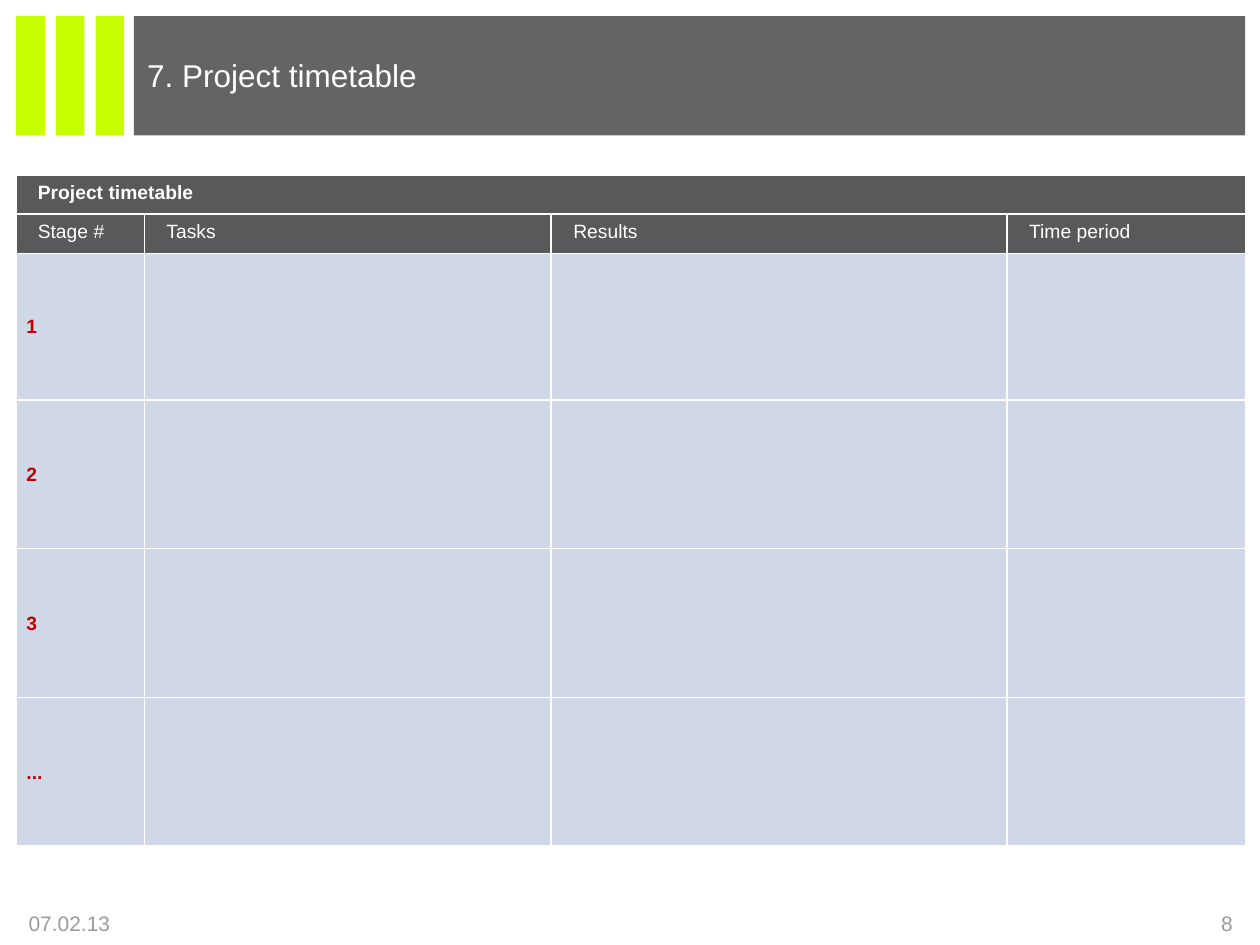
from dataclasses import dataclass

from lxml import etree
from pptx import Presentation
from pptx import util as u
from pptx.dml.color import RGBColor
from pptx.enum import shapes, text
from pptx.oxml.ns import qn
from pptx.slide import Slide
from pptx.table import _Cell
from pptx.text.text import _Paragraph

COLORS = {
    "white": "FFFFFF",
    "banner": "646464",
    "lime": "C8FF00",
    "footer": "9B9B9B",
    "header": "595959",
    "body": "D0D8E8",
    "stage": "C00000",
}
FONT = "Arial"
COLUMN_WIDTHS = (73.5, 232.5, 260.5, 136.2)
ROW_HEIGHTS = (22.3, 22.3, 83.8, 85, 85, 85)
HEADINGS = ("Stage #", "Tasks", "Results", "Time period")
STAGES = ("1", "2", "3", "...")


@dataclass(frozen=True)
class Block:
    left: float
    width: float
    color: str
    top: float = 9.2
    height: float = 68.2


@dataclass(frozen=True)
class Label:
    words: str
    left: float
    top: float
    width: float
    height: float
    size: float
    color: str
    align: text.PP_ALIGN = text.PP_ALIGN.LEFT
    anchor: text.MSO_ANCHOR = text.MSO_ANCHOR.MIDDLE
    inset: float = 3.6


BLOCKS = [Block(76.5, 635, "banner")] + [
    Block(9.2 + 22.7 * index, 16.4, "lime") for index in range(3)
]
LABELS = [
    Label("07.02.13", 9.2, 515.5, 168, 24.5, 12, "footer"),
    Label("8", 541.5, 515.5, 170, 24.5, 12, "footer", text.PP_ALIGN.RIGHT),
    Label("7. Project timetable", 77, 32, 635, 45, 18, "white",
          anchor=text.MSO_ANCHOR.TOP, inset=0),
]


def format_runs(paragraph: _Paragraph, size: float, color: str, bold: bool = False) -> None:
    for run in paragraph.runs:
        run.font.name = FONT
        run.font.size = u.Pt(size)
        run.font.bold = bold
        run.font.color.rgb = RGBColor.from_string(COLORS[color])


def draw_block(slide: Slide, block: Block) -> None:
    shape = slide.shapes.add_shape(
        shapes.MSO_SHAPE.RECTANGLE,
        u.Pt(block.left), u.Pt(block.top), u.Pt(block.width), u.Pt(block.height),
    )
    shape.shadow.inherit = False
    shape.fill.solid()
    shape.fill.fore_color.rgb = RGBColor.from_string(COLORS[block.color])
    shape.line.fill.background()


def draw_label(slide: Slide, label: Label) -> None:
    shape = slide.shapes.add_textbox(
        u.Pt(label.left), u.Pt(label.top), u.Pt(label.width), u.Pt(label.height)
    )
    frame = shape.text_frame
    frame.word_wrap = True
    frame.vertical_anchor = label.anchor
    frame.margin_top = frame.margin_bottom = u.Pt(label.inset)
    frame.text = label.words
    frame.paragraphs[0].alignment = label.align
    format_runs(frame.paragraphs[0], label.size, label.color)


def set_borders(cell: _Cell, top: float, bottom: float) -> None:
    properties = cell._tc.get_or_add_tcPr()
    for side, width in (("L", 1), ("R", 1), ("T", top), ("B", bottom)):
        line = etree.SubElement(properties, qn(f"a:ln{side}"), w=str(u.Pt(width)))
        fill = etree.SubElement(line, qn("a:solidFill"))
        etree.SubElement(fill, qn("a:srgbClr"), val=COLORS["white"])


def fill_cell(cell: _Cell, row: int, words: str) -> None:
    is_header = row < 2
    set_borders(cell, 1.5 if row == 1 else 1, 1.5 if row == 0 else 1)
    cell.fill.solid()
    cell.fill.fore_color.rgb = RGBColor.from_string(COLORS["header" if is_header else "body"])
    paragraph = cell.text_frame.paragraphs[0]
    if not words:
        etree.SubElement(paragraph._p, qn("a:endParaRPr"), sz="1100")
        return
    paragraph.text = words
    properties = paragraph._p.get_or_add_pPr()
    properties.set("marL", str(u.Pt(5.4)))
    properties.set("indent", "0")
    if not is_header:
        cell.vertical_anchor = text.MSO_ANCHOR.MIDDLE
        cell.margin_left = cell.margin_right = cell.margin_top = u.Pt(0.7)
        cell.margin_bottom = 0
    format_runs(paragraph, 11, "white" if is_header else "stage", row != 1)


def draw_timetable(slide: Slide) -> None:
    rows = [("Project timetable", "", "", ""), HEADINGS]
    rows += [(stage, "", "", "") for stage in STAGES]
    table = slide.shapes.add_table(
        len(ROW_HEIGHTS), len(COLUMN_WIDTHS), u.Pt(9), u.Pt(100.2),
        u.Pt(sum(COLUMN_WIDTHS)), u.Pt(sum(ROW_HEIGHTS)),
    ).table
    for column, width in zip(table.columns, COLUMN_WIDTHS):
        column.width = u.Pt(width)
    for index, (height, words) in enumerate(zip(ROW_HEIGHTS, rows)):
        table.rows[index].height = u.Pt(height)
        for cell, content in zip(table.rows[index].cells, words):
            fill_cell(cell, index, content)
    table.cell(0, 0).merge(table.cell(0, len(COLUMN_WIDTHS) - 1))


def main() -> None:
    """Build the project timetable slide."""
    presentation = Presentation()
    presentation.slide_width, presentation.slide_height = u.Pt(720), u.Pt(540)
    slide = presentation.slides.add_slide(presentation.slide_layouts[6])
    for block in BLOCKS:
        draw_block(slide, block)
    for label in LABELS:
        draw_label(slide, label)
    draw_timetable(slide)
    presentation.save("out.pptx")


if __name__ == "__main__":
    main()
